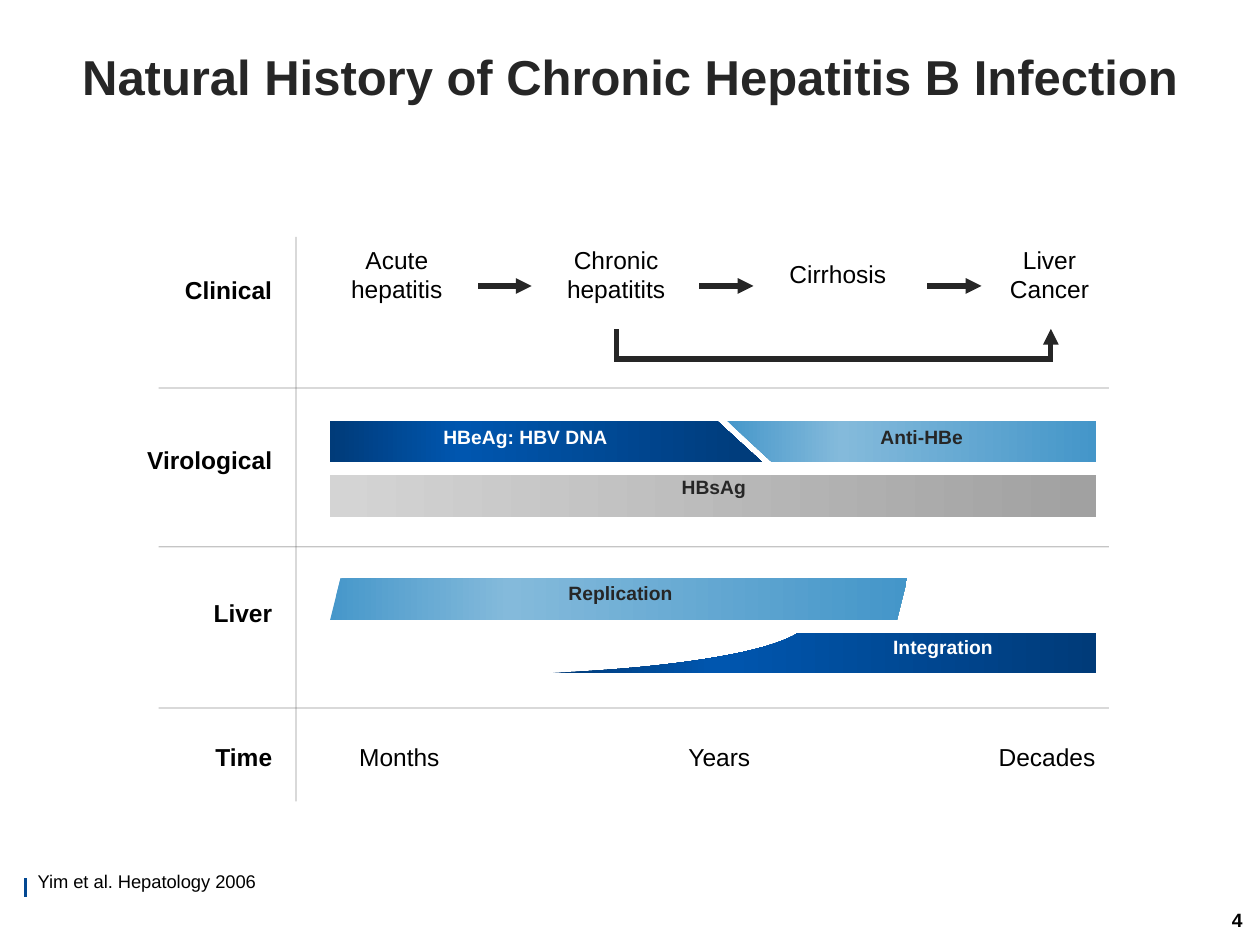
from lxml import etree
from pptx import Presentation
from pptx.dml.color import RGBColor
from pptx.enum.shapes import MSO_CONNECTOR, MSO_SHAPE
from pptx.enum.text import MSO_ANCHOR, PP_ALIGN
from pptx.oxml.ns import qn
from pptx.util import Inches, Pt

LEFT, CENTER, RIGHT = PP_ALIGN.LEFT, PP_ALIGN.CENTER, PP_ALIGN.RIGHT
TOP, MIDDLE = MSO_ANCHOR.TOP, MSO_ANCHOR.MIDDLE
STRAIGHT = MSO_CONNECTOR.STRAIGHT
RECTANGLE, PARALLELOGRAM = MSO_SHAPE.RECTANGLE, MSO_SHAPE.PARALLELOGRAM

BLACK, DARK, WHITE, RULE, ACCENT = "000000", "262626", "FFFFFF", "595959", "034892"
NAVY = [(0, "003B79"), (30, "0056AF"), (100, "003B79")]
SKY = [(0, "4697CA"), (31, "84BADB"), (100, "4496C9")]
GREY = [(1, "D4D4D4"), (99, "A1A1A1")]

TITLE = "Natural History of Chronic Hepatitis B Infection"
SOURCE = "Yim et al. Hepatology 2006"
PAGE_NUMBER = "4"

LABEL_EDGE, LINE_HEIGHT = 2.26, 0.34
ROW_LABELS = [("Clinical", 2.13, 0.9), ("Virological", 3.48, 1.2),
              ("Liver", 4.7, 0.67), ("Time", 5.84, 0.66)]
STAGES = [("Acute\nhepatitis", 3.15, 0.93), ("Chronic\nhepatitits", 4.89, 0.99),
          ("Cirrhosis", 6.65, 0.98), ("Liver\nCancer", 8.33, 0.83)]
TIMES = [("Months", 3.17, 0.84), ("Years", 5.71, 0.7), ("Decades", 8.31, 0.98)]
STAGE_MIDDLE, TIME_TOP = 2.17, 5.84

ARROW_Y, ARROW_LENGTH = 2.27, 0.43
ARROW_STARTS = [3.79, 5.55, 7.36]
BYPASS = [(8.34, 2.61), (8.34, 2.85), (4.89, 2.85), (4.89, 2.61)]

GRID_LEFT, GRID_RIGHT, GRID_TOP, GRID_BOTTOM = 1.26, 8.8, 1.88, 6.36
DIVIDER_X, DIVIDERS = 2.35, [3.08, 4.34, 5.62]

BAR_LEFT, BAR_RIGHT, BAR_HEIGHT = 2.62, 8.7, 0.33
ANTIGEN_TOP, SURFACE_TOP, REPLICATION_TOP, INTEGRATION_TOP = 3.34, 3.77, 4.59, 5.02
CURVE = [(4.39, 5.34), (5.34, 5.3), (6.1, 5.18), (6.34, 5.02)]
CURVE_STEPS = 20
BAR_LABELS = [("HBeAg: HBV DNA", 3.11, 3.36, 2.12, WHITE),
              ("HBsAg", 2.64, 3.76, 6.05, DARK),
              ("Anti-HBe", 6.52, 3.36, 1.59, DARK),
              ("Integration", 6.2, 5.03, 2.57, WHITE),
              ("Replication", 2.65, 4.6, 4.55, DARK)]


def rgb(color):
    return RGBColor.from_string(color)


def place(shape, left, top, width, height):
    shape.left, shape.top = Inches(left), Inches(top)
    shape.width, shape.height = Inches(width), Inches(height)


def write(shape, text, size=14, color=BLACK, bold=False, align=CENTER,
          anchor=TOP, wrap=True, spacing=None):
    frame = shape.text_frame
    frame.word_wrap = wrap
    frame.vertical_anchor = anchor
    for index, line in enumerate(text.split("\n")):
        para = frame.add_paragraph() if index else frame.paragraphs[0]
        para.alignment = align
        para.line_spacing = spacing
        span = para.add_run()
        span.text = line
        span.font.name = "Arial"
        span.font.size = Pt(size)
        span.font.bold = bold
        span.font.color.rgb = rgb(color)


def add_text(page, text, left, top, width, height, **style):
    box = page.shapes.add_textbox(0, 0, 0, 0)
    place(box, left, top, width, height)
    write(box, text, **style)


def style_line(shape, color, weight, arrow=False, opacity=None):
    shape.line.color.rgb = rgb(color)
    shape.line.width = Pt(weight)
    line = shape.line._get_or_add_ln()
    if opacity:
        tone = line.find(".//" + qn("a:srgbClr"))
        etree.SubElement(tone, qn("a:alpha"), val=str(opacity * 1000))
    etree.SubElement(line, qn("a:miter"), lim="800000")
    if arrow:
        etree.SubElement(line, qn("a:headEnd"), type="triangle")


def add_line(page, start, end, color, weight, **style):
    line = page.shapes.add_connector(STRAIGHT, *map(Inches, start + end))
    style_line(line, color, weight, **style)
    etree.SubElement(line._element.spPr, qn("a:effectLst"))


def add_outline(page, points, close=True):
    corners = [(Inches(x), Inches(y)) for x, y in points]
    builder = page.shapes.build_freeform(*corners[0], scale=1.0)
    builder.add_line_segments(corners[1:], close=close)
    shape = builder.convert_to_shape()
    shape.shadow.inherit = False
    return shape


def fill_bar(shape, stops):
    shape.shadow.inherit = False
    shape.line.fill.background()
    shape.fill.gradient()
    shape.fill.gradient_angle = 0
    stop_list = shape._element.spPr.find(".//" + qn("a:gsLst"))
    for stop in list(stop_list):
        stop_list.remove(stop)
    for position, color in stops:
        stop = etree.SubElement(stop_list, qn("a:gs"), pos=str(position * 1000))
        etree.SubElement(stop, qn("a:srgbClr"), val=color)


def add_bar(page, kind, top, right, stops):
    bar = page.shapes.add_shape(kind, 0, 0, 0, 0)
    place(bar, BAR_LEFT, top, right - BAR_LEFT, BAR_HEIGHT)
    fill_bar(bar, stops)


def curve_point(share):
    rest = 1 - share
    weights = (rest ** 3, 3 * rest ** 2 * share, 3 * rest * share ** 2, share ** 3)
    return tuple(sum(w * point[axis] for w, point in zip(weights, CURVE)) for axis in (0, 1))


def draw_clinical(page):
    for text, center, width in STAGES:
        height = 0.57 if "\n" in text else LINE_HEIGHT
        add_text(page, text, center - width / 2, STAGE_MIDDLE - height / 2 + 0.01,
                 width, height, wrap=False)
    for start in ARROW_STARTS:
        add_line(page, (start + ARROW_LENGTH, ARROW_Y), (start, ARROW_Y), DARK, 3, arrow=True)
    bypass = add_outline(page, BYPASS, close=False)
    bypass.fill.background()
    style_line(bypass, DARK, 3, arrow=True)


def draw_bars(page):
    bottom = ANTIGEN_TOP + BAR_HEIGHT
    antigen = [(BAR_LEFT, ANTIGEN_TOP), (5.69, ANTIGEN_TOP), (6.05, bottom), (BAR_LEFT, bottom)]
    antibody = [(5.77, ANTIGEN_TOP), (BAR_RIGHT, ANTIGEN_TOP), (BAR_RIGHT, bottom), (6.13, bottom)]
    rise = [curve_point(step / CURVE_STEPS) for step in range(CURVE_STEPS + 1)]
    integration = rise + [(BAR_RIGHT, INTEGRATION_TOP), (BAR_RIGHT, CURVE[0][1])]
    for points, stops in ((antigen, NAVY), (antibody, SKY), (integration, NAVY)):
        fill_bar(add_outline(page, points), stops)
    add_bar(page, RECTANGLE, SURFACE_TOP, BAR_RIGHT, GREY)
    add_bar(page, PARALLELOGRAM, REPLICATION_TOP, 7.2, SKY)
    for text, left, top, width, color in BAR_LABELS:
        add_text(page, text, left, top, width, 0.25, size=11, color=color, bold=True, spacing=0.8)


def draw_grid(page):
    ends = [((GRID_LEFT, y), (GRID_RIGHT, y)) for y in DIVIDERS]
    ends.append(((DIVIDER_X, GRID_TOP), (DIVIDER_X, GRID_BOTTOM)))
    for start, end in ends:
        add_line(page, start, end, RULE, 0.75, opacity=35)
    for text, top, width in ROW_LABELS:
        add_text(page, text, LABEL_EDGE - width, top, width, LINE_HEIGHT,
                 bold=True, align=RIGHT, wrap=False)
    for text, center, width in TIMES:
        add_text(page, text, center - width / 2, TIME_TOP, width, LINE_HEIGHT, wrap=False)


def main():
    deck = Presentation()
    deck.slide_width, deck.slide_height = Inches(10), Inches(7.5)
    page = deck.slides.add_slide(deck.slide_layouts[5])
    title = page.shapes.title
    place(title, 0, 0.03, 10, 1.15)
    write(title, TITLE, size=28, color=DARK, bold=True, anchor=MIDDLE)
    draw_clinical(page)
    draw_bars(page)
    draw_grid(page)
    add_text(page, SOURCE, 0.2, 6.86, 4.16, 0.28, size=10.5, align=LEFT)
    add_line(page, (0.2, 6.97), (0.2, 7.12), ACCENT, 1.5)
    add_text(page, PAGE_NUMBER, 7.63, 7.11, 2.33, 0.38, size=11, bold=True,
             align=RIGHT, anchor=MIDDLE)
    deck.save("out.pptx")


if __name__ == "__main__":
    main()
